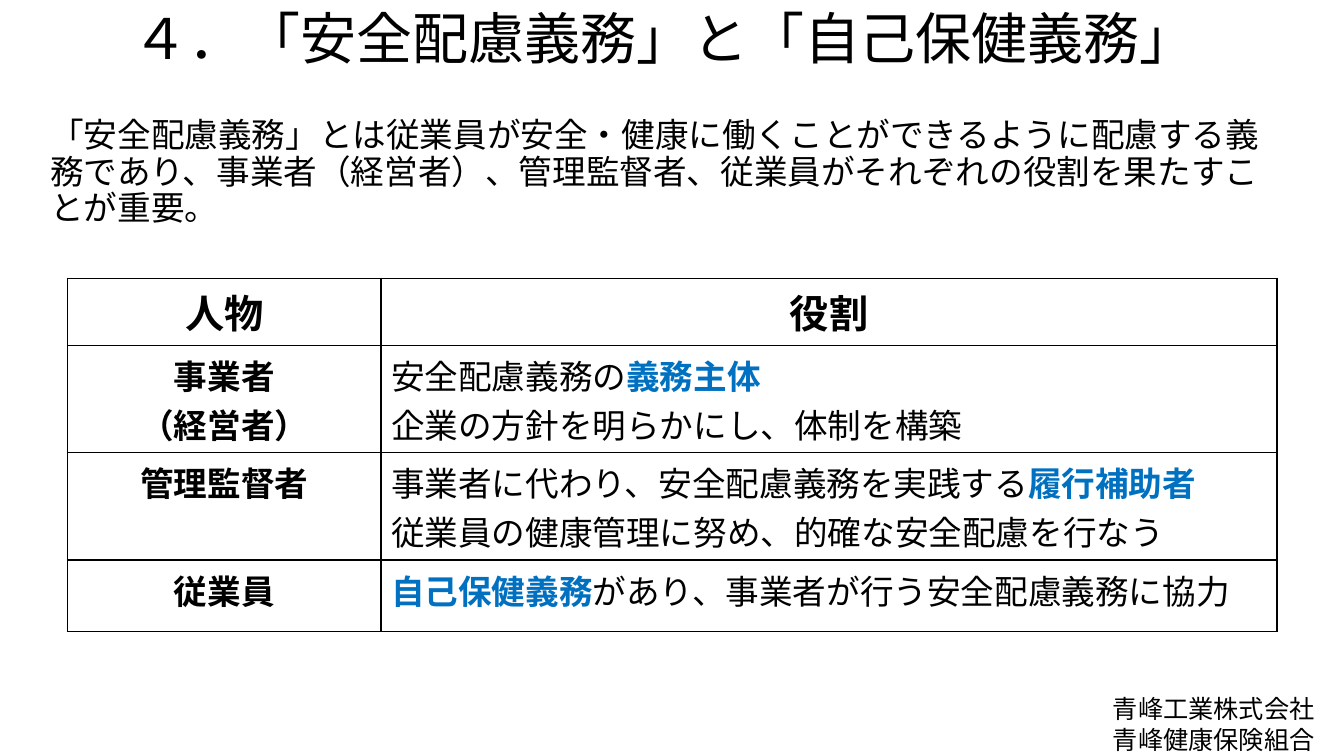
from lxml import etree
from pptx import Presentation
from pptx.dml.color import RGBColor
from pptx.enum.lang import MSO_LANGUAGE_ID
from pptx.enum.text import MSO_ANCHOR, PP_ALIGN
from pptx.oxml.ns import qn
from pptx.util import Pt

CENTER, LEFT = PP_ALIGN.CENTER, PP_ALIGN.LEFT
TOP, MIDDLE, BOTTOM = MSO_ANCHOR.TOP, MSO_ANCHOR.MIDDLE, MSO_ANCHOR.BOTTOM
JAPANESE = MSO_LANGUAGE_ID.JAPANESE
FONT = "Noto Sans CJK JP"
BLACK, BLUE, WHITE = "000000", "0070C0", "FFFFFF"

# Content: a paragraph is a list of (text, is key term) runs
TITLE = [[("４．「安全配慮義務」と「自己保健義務」", False)]]
SUMMARY = [[("「安全配慮義務」とは従業員が安全・健康に働くことができるように配慮する義務であり、"
             "事業者（経営者）、管理監督者、従業員がそれぞれの役割を果たすことが重要。", False)]]
ISSUERS = [[("青峰工業株式会社", False)], [("青峰健康保険組合", False)]]
HEADINGS = ["人物", "役割"]
ROLES = [
    (["事業者", "（経営者）"],
     [[("安全配慮義務の", False), ("義務主体", True)],
      [("企業の方針を明らかにし、体制を構築", False)]]),
    (["管理監督者"],
     [[("事業者に代わり、安全配慮義務を実践する", False), ("履行補助者", True)],
      [("従業員の健康管理に努め、的確な安全配慮を行なう", False)]]),
    (["従業員"],
     [[("自己保健義務", True), ("があり、事業者が行う安全配慮義務に協力", False)]]),
]

# Layout in points
SLIDE_SIZE = (960, 540)
TITLE_BOX = (70, 0, 809, 54.7)
SUMMARY_BOX = (28.8, 81.4, 891.4, 90)
ISSUER_BOX = (774, 494, 186, 46)
TABLE_LEFT, TABLE_TOP = 48.2, 198.7
COLUMN_WIDTHS = [224, 640]
ROW_HEIGHTS = [48, 76.7, 76.7, 51]


def color(hex_value):
    return RGBColor.from_string(hex_value)


def write(frame, paragraphs, size, align=LEFT, bold=False, spacing=None, before=0):
    for i, runs in enumerate(paragraphs):
        paragraph = frame.paragraphs[0] if i == 0 else frame.add_paragraph()
        paragraph.alignment = align
        paragraph.space_before = Pt(before)
        if spacing:
            paragraph.line_spacing = spacing
        for text, key_term in runs:
            run = paragraph.add_run()
            run.text = text
            font = run.font
            font.size = Pt(size)
            font.bold = bold or key_term
            font.color.rgb = color(BLUE if key_term else BLACK)
            font.name = FONT
            font.language_id = JAPANESE
            # East Asian typeface
            etree.SubElement(run._r.rPr, qn("a:ea"), typeface=FONT)


def add_text(slide, box, paragraphs, size, anchor, **style):
    frame = slide.shapes.add_textbox(*map(Pt, box)).text_frame
    frame.word_wrap = True
    frame.vertical_anchor = anchor
    write(frame, paragraphs, size, **style)


def style_cell(cell):
    cell.fill.solid()
    cell.fill.fore_color.rgb = color(WHITE)
    properties = cell._tc.get_or_add_tcPr()
    for i, side in enumerate(("a:lnL", "a:lnR", "a:lnT", "a:lnB")):
        border = etree.Element(qn(side), w=str(Pt(1)))
        fill = etree.SubElement(border, qn("a:solidFill"))
        etree.SubElement(fill, qn("a:srgbClr"), val=BLACK)
        properties.insert(i, border)


def add_role_table(slide):
    table = slide.shapes.add_table(
        len(ROW_HEIGHTS), len(COLUMN_WIDTHS), Pt(TABLE_LEFT), Pt(TABLE_TOP),
        Pt(sum(COLUMN_WIDTHS)), Pt(sum(ROW_HEIGHTS))).table
    table.horz_banding = False
    for column, width in zip(table.columns, COLUMN_WIDTHS):
        column.width = Pt(width)
    for row, height in zip(table.rows, ROW_HEIGHTS):
        row.height = Pt(height)
    for cell in table.iter_cells():
        style_cell(cell)

    for i, heading in enumerate(HEADINGS):
        write(table.cell(0, i).text_frame, [[(heading, False)]], 28, CENTER, bold=True)
    for i, (person, duties) in enumerate(ROLES, start=1):
        person_lines = [[(line, False)] for line in person]
        write(table.cell(i, 0).text_frame, person_lines, 24, CENTER, bold=True)
        write(table.cell(i, 1).text_frame, duties, 24)


def main():
    deck = Presentation()
    deck.slide_width, deck.slide_height = map(Pt, SLIDE_SIZE)
    slide = deck.slides.add_slide(deck.slide_layouts[6])

    add_text(slide, TITLE_BOX, TITLE, 40, BOTTOM, align=CENTER, spacing=0.9)
    add_text(slide, SUMMARY_BOX, SUMMARY, 24, TOP, spacing=0.9, before=10)
    add_role_table(slide)
    add_text(slide, ISSUER_BOX, ISSUERS, 18, MIDDLE, align=CENTER)

    deck.save("out.pptx")


if __name__ == "__main__":
    main()
